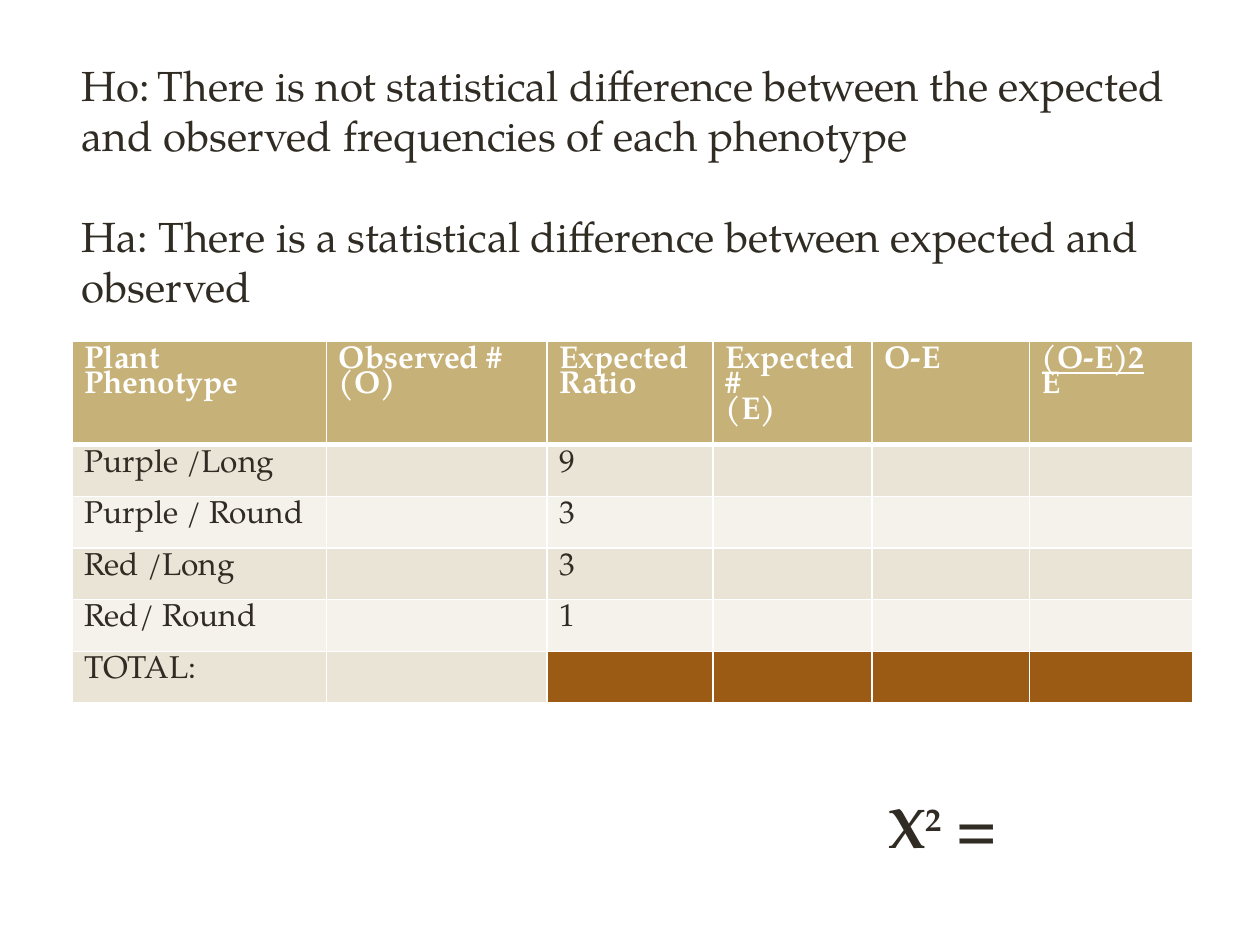
from lxml.etree import SubElement
from pptx import Presentation
from pptx.dml.color import RGBColor
from pptx.enum.text import MSO_ANCHOR, MSO_AUTO_SIZE, PP_ALIGN
from pptx.oxml.ns import qn
from pptx.util import Inches, Pt

FONT = "TeX Gyre Pagella"
INK = RGBColor(0x30, 0x2C, 0x24)
WHITE = RGBColor(0xFF, 0xFF, 0xFF)
GOLD = RGBColor(0xC6, 0xB1, 0x78)
BROWN = RGBColor(0x9C, 0x5B, 0x14)
BANDS = [RGBColor(0xEA, 0xE4, 0xD6), RGBColor(0xF5, 0xF2, 0xEC)]

NULL = [
    ("Ho:", 24),
    (" ", 18),
    ("There is not statistical difference between the expected "
     "and observed frequencies of each phenotype", 24),
]
ALT = "Ha: There is a statistical difference between expected and observed"

HEADS = [
    ["Plant Phenotype"],
    ["Observed #", "(O)"],
    ["Expected Ratio"],
    ["Expected #", "(E)"],
    ["O-E"],
    ["(O-E)2", "E"],
]
ROWS = [  # phenotype, expected ratio
    ("Purple /Long", "9"),
    ("Purple / Round", "3"),
    ("Red /Long", "3"),
    ("Red/ Round", "1"),
    ("TOTAL:", ""),
]
WIDTHS = [2.02, 1.75, 1.32, 1.26, 1.25, 1.3]
HEAD_H, ROW_H = 0.82, 0.41
LEFT, WIDE = 0.55, 8.91


def write(para, text, size=18, color=INK, bold=False, line=False, sup=False):
    run = para.add_run()
    run.text = text
    font = run.font
    font.name, font.size, font.bold = FONT, Pt(size), bold
    font.underline = line
    font.color.rgb = color
    if sup:
        run._r.get_or_add_rPr().set("baseline", "30000")


def edge(cell, top=1, bottom=1):
    """Give the cell white borders, with top and bottom widths in points."""
    props = cell._tc.get_or_add_tcPr()
    sides = [("L", 1), ("R", 1), ("T", top), ("B", bottom)]
    for spot, (side, width) in enumerate(sides):
        line = SubElement(props, qn(f"a:ln{side}"), w=str(Pt(width)))
        fill = SubElement(line, qn("a:solidFill"))
        SubElement(fill, qn("a:srgbClr"), val=str(WHITE))
        props.insert(spot, line)


def paint(cell, color):
    cell.fill.solid()
    cell.fill.fore_color.rgb = color


def add_claims(slide):
    box = slide.shapes.add_textbox(
        Inches(LEFT), Inches(0.42), Inches(WIDE), Inches(2.12))
    frame = box.text_frame
    frame.word_wrap = True
    first = frame.paragraphs[0]
    first.space_after = Pt(28.8)
    for text, size in NULL:
        write(first, text, size=size)
    write(frame.add_paragraph(), ALT, size=24)


def add_grid(slide):
    high = HEAD_H + ROW_H * len(ROWS)
    grid = slide.shapes.add_table(
        len(ROWS) + 1, len(HEADS), Inches(0.57), Inches(2.71),
        Inches(sum(WIDTHS)), Inches(high)).table
    for col, width in zip(grid.columns, WIDTHS):
        col.width = Inches(width)
    for num, row in enumerate(grid.rows):
        row.height = Inches(ROW_H if num else HEAD_H)

    for col, lines in enumerate(HEADS):
        cell = grid.cell(0, col)
        paint(cell, GOLD)
        edge(cell, bottom=3)
        frame = cell.text_frame
        for num, text in enumerate(lines):
            para = frame.add_paragraph() if num else frame.paragraphs[0]
            para.line_spacing = 0.83
            write(para, text, color=WHITE, bold=True, line=text == "(O-E)2")

    for num, (name, ratio) in enumerate(ROWS, 1):
        texts = {0: name, 2: ratio}
        for col in range(len(HEADS)):
            cell = grid.cell(num, col)
            dark = num == len(ROWS) and col >= 2
            paint(cell, BROWN if dark else BANDS[(num - 1) % 2])
            edge(cell, top=3 if num == 1 else 1)
            if texts.get(col):
                para = cell.text_frame.paragraphs[0]
                para.line_spacing = 0.83
                write(para, texts[col])


def add_result(slide):
    title = slide.shapes.title
    title.left, title.top = Inches(LEFT), Inches(6.4)
    title.width, title.height = Inches(WIDE), Inches(0.97)
    frame = title.text_frame
    frame.auto_size = MSO_AUTO_SIZE.NONE
    frame.vertical_anchor = MSO_ANCHOR.BOTTOM
    frame.margin_left = Inches(6.5)
    frame.margin_top, frame.margin_bottom = 0, Inches(0.55)
    para = frame.paragraphs[0]
    para.alignment = PP_ALIGN.LEFT
    for text, sup in [("X", False), ("2", True), (" =", False)]:
        write(para, text, size=32, bold=True, sup=sup)


def main():
    deck = Presentation()
    deck.slide_width, deck.slide_height = Inches(10), Inches(7.5)
    slide = deck.slides.add_slide(deck.slide_layouts[5])
    add_result(slide)
    add_grid(slide)
    add_claims(slide)
    deck.save("out.pptx")


if __name__ == "__main__":
    main()
